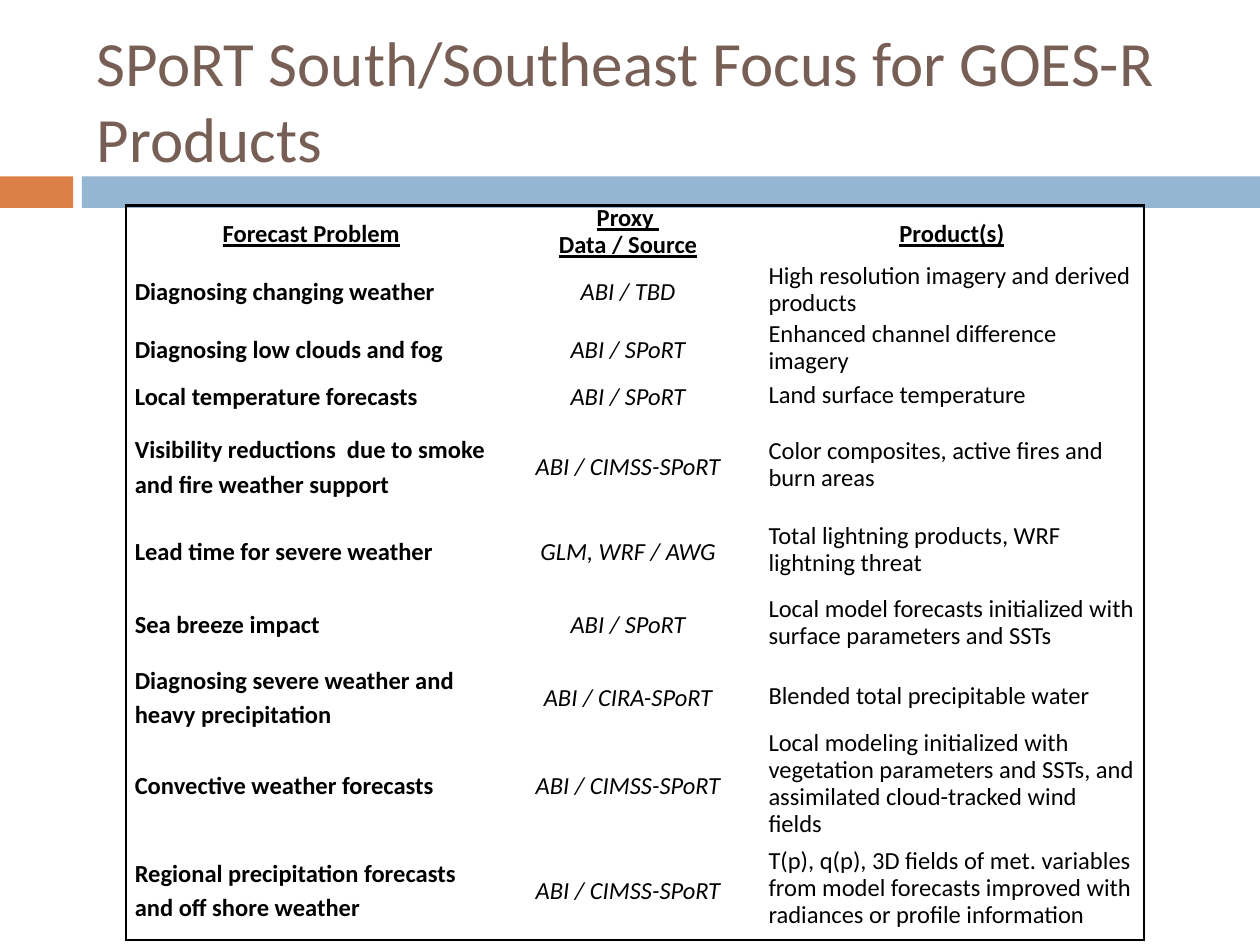
"""Build the slide of forecast problems, proxy data and satellite products."""
from dataclasses import dataclass, field

import lxml.etree
import pptx
import pptx.dml.color
import pptx.enum.shapes
import pptx.enum.text
import pptx.oxml.ns
import pptx.table
import pptx.util

Inches = pptx.util.Inches
Pt = pptx.util.Pt
RGBColor = pptx.dml.color.RGBColor
PP_ALIGN = pptx.enum.text.PP_ALIGN
MIDDLE = pptx.enum.text.MSO_ANCHOR.MIDDLE

ORANGE = RGBColor(0xDD, 0x80, 0x47)
BLUE = RGBColor(0x94, 0xB6, 0xD2)
BROWN = RGBColor(0x77, 0x5F, 0x55)
BLACK = RGBColor(0, 0, 0)
FONT_NAME = "Calibri"
BORDER_WIDTH = Pt(1.5)


@dataclass(frozen=True)
class Bar:
    """A coloured bar under the title."""
    left: float
    width: float
    color: RGBColor


@dataclass(frozen=True)
class TextStyle:
    """Paragraph and font formats of one kind of text."""
    paragraph: dict = field(default_factory=dict)
    font: dict = field(default_factory=dict)
    size: float = 14
    color: RGBColor = BLACK


@dataclass(frozen=True)
class ForecastRow:
    """One forecast problem with its data source and products."""
    height: float
    problem: str
    source: str
    product: str


BARS = [Bar(0, 0.58, ORANGE), Bar(0.65, 9.35, BLUE)]
COLUMN_WIDTHS = [2.94, 2.09, 3.05]
HEADER_HEIGHT = 0.4
HEADERS = ["Forecast Problem", "Proxy \nData / Source", "Product(s)"]
ROWS = [
    ForecastRow(0.49, "Diagnosing changing weather", "ABI / TBD",
                "High resolution imagery and derived products"),
    ForecastRow(0.4, "Diagnosing low clouds and fog", "ABI / SPoRT",
                "Enhanced channel difference imagery"),
    ForecastRow(0.33, "Local temperature forecasts", "ABI / SPoRT",
                "Land surface temperature"),
    ForecastRow(0.78, "Visibility reductions  due to smoke and fire weather support",
                "ABI / CIMSS-SPoRT", "Color composites, active fires and burn areas"),
    ForecastRow(0.56, "Lead time for severe weather", "GLM, WRF / AWG",
                "Total lightning products, WRF lightning threat"),
    ForecastRow(0.61, "Sea breeze impact", "ABI / SPoRT",
                "Local model forecasts initialized with surface parameters and SSTs"),
    ForecastRow(0.52, "Diagnosing severe weather and heavy precipitation",
                "ABI / CIRA-SPoRT", "Blended total precipitable water"),
    ForecastRow(0.81, "Convective weather forecasts", "ABI / CIMSS-SPoRT",
                "Local modeling initialized with vegetation parameters and SSTs, "
                "and assimilated cloud-tracked wind fields"),
    ForecastRow(0.81, "Regional precipitation forecasts and off shore weather",
                "ABI / CIMSS-SPoRT",
                "T(p), q(p), 3D fields of met. variables from model forecasts "
                "improved with radiances or profile information"),
]

HEADER_FONT = {"bold": True, "underline": True}
CENTERED = {"alignment": PP_ALIGN.CENTER, "line_spacing": 1.15}
HEADER_STYLES = [
    TextStyle(CENTERED | {"space_before": Pt(6)}, HEADER_FONT),
    TextStyle(CENTERED | {"line_spacing": 0.9}, HEADER_FONT),
    TextStyle(CENTERED | {"space_before": Pt(6), "space_after": Pt(6)}, HEADER_FONT),
]
BODY_STYLES = [
    TextStyle({"line_spacing": 1.15}, {"bold": True}),
    TextStyle(CENTERED, {"bold": False, "italic": True}),
    TextStyle({"line_spacing": 0.9, "space_before": Pt(6), "space_after": Pt(6)},
              {"bold": False}),
]
TITLE_STYLE = TextStyle(size=36, color=BROWN)
CELL_FORMAT = {
    "vertical_anchor": MIDDLE,
    "margin_left": Inches(0.07),
    "margin_right": Inches(0.07),
    "margin_top": 0,
    "margin_bottom": 0,
}


def apply_format(target: object, values: dict) -> None:
    """Set every attribute named in the format values."""
    for name, value in values.items():
        setattr(target, name, value)


def write_text(text_frame: pptx.text.text.TextFrame, text: str, style: TextStyle) -> None:
    """Write one styled paragraph for each line of the text."""
    for index, line in enumerate(text.split("\n")):
        paragraph = text_frame.add_paragraph() if index else text_frame.paragraphs[0]
        apply_format(paragraph, style.paragraph)
        run = paragraph.add_run()
        run.text = line
        apply_format(run.font, {"name": FONT_NAME, "size": Pt(style.size)} | style.font)
        run.font.color.rgb = style.color


def draw_bar(slide: pptx.slide.Slide, bar: Bar) -> None:
    """Draw a bar without outline."""
    shape = slide.shapes.add_shape(
        pptx.enum.shapes.MSO_SHAPE.RECTANGLE,
        Inches(bar.left), Inches(1.4), Inches(bar.width), Inches(0.25))
    shape.shadow.inherit = False
    shape.fill.solid()
    shape.fill.fore_color.rgb = bar.color
    shape.line.fill.background()


def set_borders(cell: pptx.table._Cell, visible: dict[str, bool]) -> None:
    """Draw the visible sides of a cell in black and hide the others."""
    qualified = pptx.oxml.ns.qn
    properties = cell._tc.get_or_add_tcPr()
    for side, shown in visible.items():
        line = lxml.etree.SubElement(
            properties, qualified(f"a:ln{side}"), w=str(int(BORDER_WIDTH)))
        if shown:
            fill = lxml.etree.SubElement(line, qualified("a:solidFill"))
            lxml.etree.SubElement(fill, qualified("a:srgbClr"), val=str(BLACK))
        else:
            lxml.etree.SubElement(line, qualified("a:noFill"))


def draw_table(slide: pptx.slide.Slide) -> None:
    """Draw the forecast table with an outer frame only."""
    heights = [HEADER_HEIGHT] + [row.height for row in ROWS]
    texts = [HEADERS] + [[row.problem, row.source, row.product] for row in ROWS]
    last_row, last_column = len(heights) - 1, len(COLUMN_WIDTHS) - 1
    table = slide.shapes.add_table(
        len(heights), len(COLUMN_WIDTHS), Inches(1), Inches(1.63),
        Inches(sum(COLUMN_WIDTHS)), Inches(sum(heights))).table
    apply_format(table, {"first_row": False, "horz_banding": False})
    for column, width in zip(table.columns, COLUMN_WIDTHS):
        column.width = Inches(width)
    for row_index, height in enumerate(heights):
        table.rows[row_index].height = Inches(height)
        styles = BODY_STYLES if row_index else HEADER_STYLES
        for column_index, style in enumerate(styles):
            cell = table.cell(row_index, column_index)
            apply_format(cell, CELL_FORMAT)
            set_borders(cell, {
                "L": column_index == 0, "R": column_index == last_column,
                "T": row_index == 0, "B": row_index == last_row})
            cell.fill.background()
            write_text(cell.text_frame, texts[row_index][column_index], style)


def draw_title(slide: pptx.slide.Slide) -> None:
    """Write the slide title."""
    title = slide.shapes.add_textbox(
        Inches(0.67), Inches(0.25), Inches(8.92), Inches(1.08))
    apply_format(title.text_frame, {"word_wrap": True, "vertical_anchor": MIDDLE})
    write_text(title.text_frame, "SPoRT South/Southeast Focus for GOES-R Products",
               TITLE_STYLE)


def main() -> None:
    """Build and save the presentation."""
    presentation = pptx.Presentation()
    apply_format(presentation, {"slide_width": Inches(10), "slide_height": Inches(7.5)})
    slide = presentation.slides.add_slide(presentation.slide_layouts[6])
    for bar in BARS:
        draw_bar(slide, bar)
    draw_table(slide)
    draw_title(slide)
    presentation.save("out.pptx")


if __name__ == "__main__":
    main()
